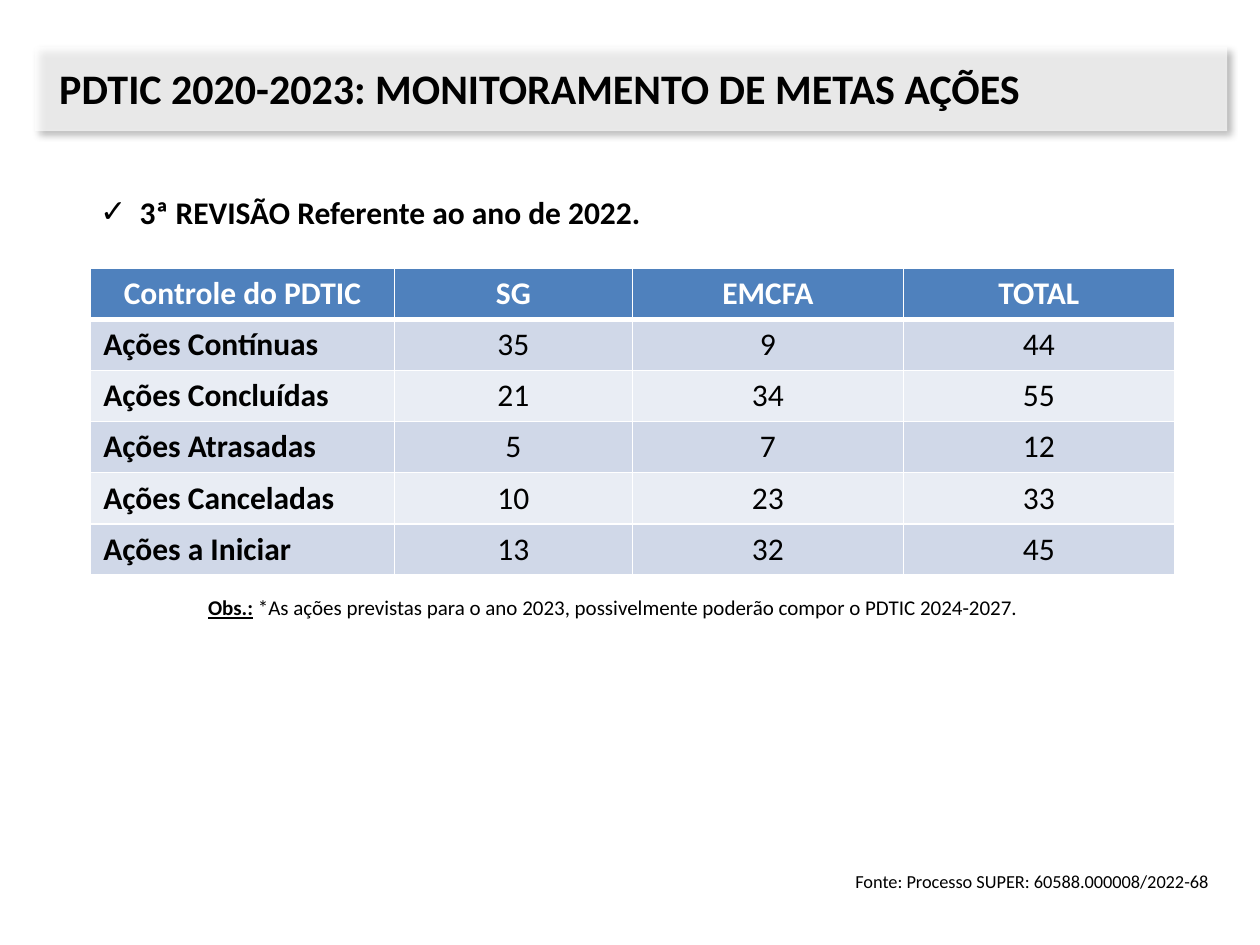
"""Builds the PDTIC 2020-2023 goals and actions monitoring slide."""
from dataclasses import dataclass

from lxml import etree
from pptx import Presentation
from pptx.dml.color import RGBColor
from pptx.enum.shapes import MSO_SHAPE
from pptx.enum.text import MSO_ANCHOR, MSO_AUTO_SIZE, PP_ALIGN
from pptx.oxml.ns import qn
from pptx.util import Pt

LEFT, CENTER, JUSTIFY = PP_ALIGN.LEFT, PP_ALIGN.CENTER, PP_ALIGN.JUSTIFY
MIDDLE = MSO_ANCHOR.MIDDLE
GROW, FIXED = MSO_AUTO_SIZE.SHAPE_TO_FIT_TEXT, MSO_AUTO_SIZE.NONE
BANNER_SHAPE = MSO_SHAPE.ROUND_2_DIAG_RECTANGLE

TITLE = "PDTIC 2020-2023: MONITORAMENTO DE METAS AÇÕES"
REVISION = "3ª REVISÃO Referente ao ano de 2022."
HEADER = ("Controle do PDTIC", "SG", "EMCFA", "TOTAL")
ACTIONS = [
    ("Ações Contínuas", 35, 9, 44),
    ("Ações Concluídas", 21, 34, 55),
    ("Ações Atrasadas", 5, 7, 12),
    ("Ações Canceladas", 10, 23, 33),
    ("Ações a Iniciar", 13, 32, 45),
]
NOTE_LABEL = "Obs.:"
NOTE = "\u00a0*As ações previstas para o ano 2023, possivelmente poderão compor o PDTIC 2024-2027.\u00a0"
SOURCE = "Fonte: Processo SUPER: 60588.000008/2022-68"

SLIDE_SIZE = (720, 540)
BANNER_BOX = (20.16, 26.64, 681.12, 48.24)
TITLE_BOX = (26.64, 28.8, 670.32, 42.48)
REVISION_BOX = (31.68, 106.56, 360, 28.8)
TABLE_ORIGIN = (51.84, 153.36)
COLUMN_WIDTHS = (173.5, 136.1, 154.8, 154.8)
ROW_HEIGHT = 28.8
NOTE_BOX = (51.84, 336.24, 599.76, 21.6)
SOURCE_BOX = (445.68, 493.92, 255.6, 20.16)


@dataclass(frozen=True)
class Theme:
    """Font, colours and type sizes of the slide."""
    font: str = "Calibri"
    ink: str = "000000"
    paper: str = "FFFFFF"
    header: str = "4F81BD"
    bands: tuple = ("D0D8E8", "E9EDF4")
    title: float = 24
    body: float = 18
    note: float = 12
    source: float = 10.5
    rule: float = 1
    header_rule: float = 3


THEME = Theme()


def points(values):
    return [Pt(value) for value in values]


def style_run(run, size, bold=False, color=THEME.ink):
    run.font.name = THEME.font
    run.font.size = Pt(size)
    run.font.bold = bold
    run.font.color.rgb = RGBColor.from_string(color)


def add_text(slide, box, text, size, align, bold=False):
    frame = slide.shapes.add_textbox(*points(box)).text_frame
    frame.word_wrap = True
    frame.auto_size = GROW
    frame.text = text
    paragraph = frame.paragraphs[0]
    paragraph.alignment = align
    style_run(paragraph.runs[0], size, bold)
    return paragraph


def set_indent(paragraph, margin, hanging=0):
    properties = paragraph._p.get_or_add_pPr()
    properties.set("marL", str(Pt(margin)))
    properties.set("indent", str(Pt(-hanging)))
    return properties


def add_banner(slide):
    banner = slide.shapes.add_shape(BANNER_SHAPE, *points(BANNER_BOX))
    for corner in range(2):
        banner.adjustments[corner] = 0
    banner.fill.solid()
    banner.fill.fore_color.rgb = RGBColor.from_string(THEME.paper)
    banner.line.fill.background()
    banner.shadow.inherit = False
    properties = banner._element.spPr
    fill_color = properties.find(qn("a:solidFill")).find(qn("a:srgbClr"))
    etree.SubElement(fill_color, qn("a:alpha"), val="68000")
    shadow = etree.SubElement(
        properties.find(qn("a:effectLst")), qn("a:outerShdw"),
        blurRad=str(Pt(4)), dist=str(Pt(3)), dir=str(45 * 60000),
        algn="tl", rotWithShape="0")
    shade = etree.SubElement(shadow, qn("a:srgbClr"), val=THEME.ink)
    etree.SubElement(shade, qn("a:alpha"), val="40000")


def place_title(slide):
    title = slide.shapes.title
    title.left, title.top, title.width, title.height = points(TITLE_BOX)
    slide.shapes._spTree.append(title._element)
    frame = title.text_frame
    frame.text = TITLE
    frame.word_wrap = True
    frame.auto_size = FIXED
    frame.vertical_anchor = MIDDLE
    frame.paragraphs[0].alignment = LEFT
    style_run(frame.paragraphs[0].runs[0], THEME.title, bold=True)


def set_borders(cell, top, bottom):
    properties = cell._tc.get_or_add_tcPr()
    widths = {"L": THEME.rule, "R": THEME.rule, "T": top, "B": bottom}
    for side, width in widths.items():
        border = etree.SubElement(properties, qn(f"a:ln{side}"), w=str(Pt(width)))
        fill = etree.SubElement(border, qn("a:solidFill"))
        etree.SubElement(fill, qn("a:srgbClr"), val=THEME.paper)


def add_actions_table(slide):
    rows = [HEADER, *ACTIONS]
    size = (sum(COLUMN_WIDTHS), ROW_HEIGHT * len(rows))
    table = slide.shapes.add_table(
        len(rows), len(HEADER), *points(TABLE_ORIGIN + size)).table
    for column, width in zip(table.columns, COLUMN_WIDTHS):
        column.width = Pt(width)
    for r, values in enumerate(rows):
        is_header = r == 0
        table.rows[r].height = Pt(ROW_HEIGHT)
        background = THEME.header if is_header else THEME.bands[(r - 1) % 2]
        top = THEME.header_rule if r == 1 else THEME.rule
        bottom = THEME.header_rule if is_header else THEME.rule
        for c, value in enumerate(values):
            is_label = c == 0
            cell = table.cell(r, c)
            set_borders(cell, top, bottom)
            cell.fill.solid()
            cell.fill.fore_color.rgb = RGBColor.from_string(background)
            cell.text_frame.text = str(value)
            paragraph = cell.text_frame.paragraphs[0]
            paragraph.alignment = LEFT if is_label and not is_header else CENTER
            style_run(paragraph.runs[0], THEME.body, is_header or is_label,
                      THEME.paper if is_header else THEME.ink)


def add_revision(slide):
    revision = add_text(slide, REVISION_BOX, REVISION, THEME.body, CENTER, bold=True)
    properties = set_indent(revision, 22.5, hanging=22.5)
    etree.SubElement(properties, qn("a:buFont"), typeface="Wingdings")
    etree.SubElement(properties, qn("a:buChar"), char="✓")
    properties.find(qn("a:buFont")).set("typeface", THEME.font)


def add_note(slide):
    note = add_text(slide, NOTE_BOX, NOTE_LABEL, THEME.note, CENTER, bold=True)
    note.runs[0].font.underline = True
    detail = note.add_run()
    detail.text = NOTE
    style_run(detail, THEME.note)


def main():
    deck = Presentation()
    deck.slide_width, deck.slide_height = points(SLIDE_SIZE)
    slide = deck.slides.add_slide(deck.slide_layouts[5])
    source = add_text(slide, SOURCE_BOX, SOURCE, THEME.source, JUSTIFY)
    set_indent(source, 36)
    add_banner(slide)
    place_title(slide)
    add_actions_table(slide)
    add_revision(slide)
    add_note(slide)
    deck.save("out.pptx")


if __name__ == "__main__":
    main()
